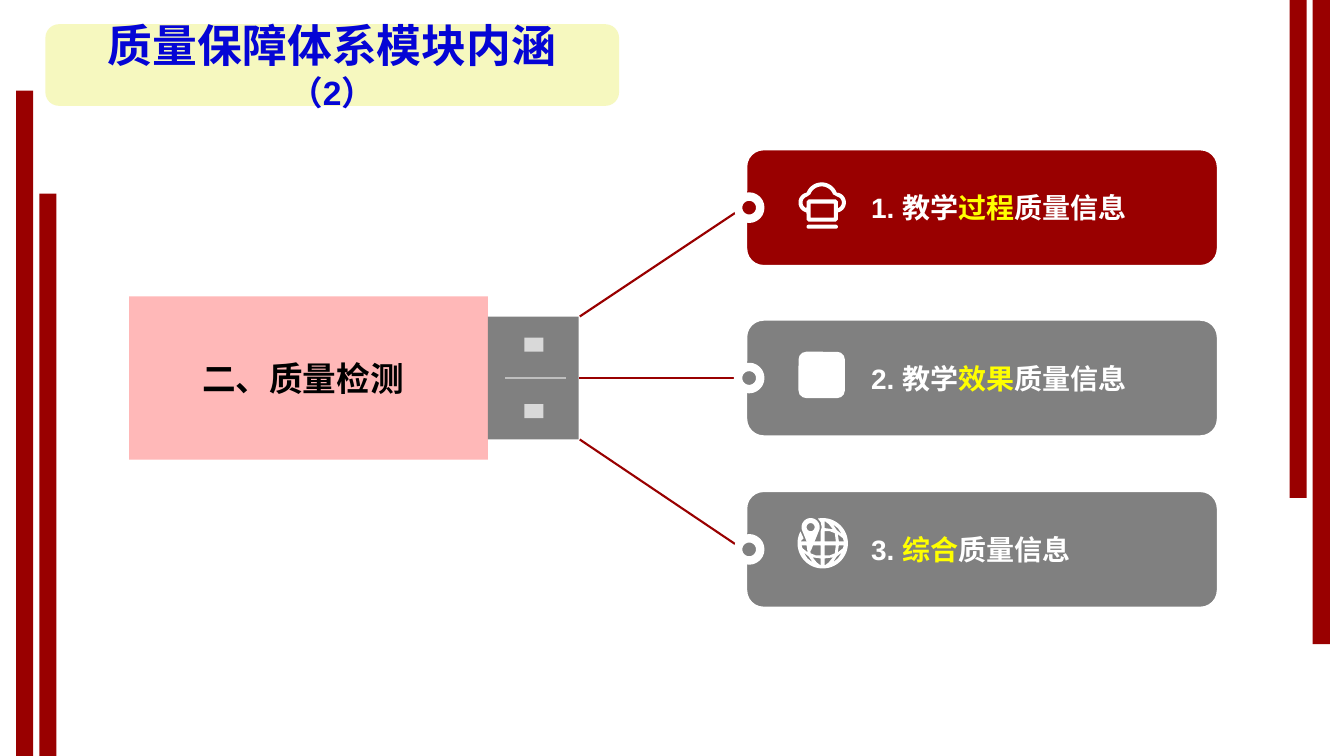
from math import cos, radians, sin

from lxml.etree import SubElement
from pptx import Presentation
from pptx.dml.color import RGBColor
from pptx.enum.shapes import MSO_CONNECTOR, MSO_SHAPE
from pptx.enum.text import MSO_ANCHOR, PP_ALIGN
from pptx.oxml.ns import qn
from pptx.util import Emu, Pt

EMU_PER_PX = 9144
LATIN_FONT = "Arial"
CHINESE_FONT = "Noto Sans CJK SC"
COLORS = {
    "red": "990000", "gray": "808080", "pink": "FFB8B8", "cream": "F6F8BF",
    "white": "FFFFFF", "black": "000000", "blue": "0505D5",
    "yellow": "FFFF00", "contact": "D9D9D9", "seam": "BFBFBF",
}
SIDE_BARS = [(16, 90, 660), (39, 192, 558), (1302, 0, 639), (1279, 0, 494)]
ITEMS = [
    ("red", [("1. 教学", "white"), ("过程", "yellow"), ("质量信息", "white")]),
    ("gray", [("2. 教学", "white"), ("效果", "yellow"), ("质量信息", "white")]),
    ("gray", [("3. ", "white"), ("综合", "yellow"), ("质量信息", "white")]),
]


def px(value):
    return Emu(round(value * EMU_PER_PX))


def color(name):
    return RGBColor.from_string(COLORS[name])


def paint(shape, fill, outline=None):
    shape.shadow.inherit = False
    shape.fill.solid()
    shape.fill.fore_color.rgb = color(fill)
    if outline:
        shape.line.color.rgb = color(outline)
        shape.line.width = Pt(6)
    else:
        shape.line.fill.background()


def add_block(slide, kind, left, top, width, height, fill, outline=None):
    shape = slide.shapes.add_shape(kind, px(left), px(top), px(width), px(height))
    paint(shape, fill, outline)
    return shape


def add_line(slide, start, end, line_color, width):
    line = slide.shapes.add_connector(
        MSO_CONNECTOR.STRAIGHT, px(start[0]), px(start[1]), px(end[0]), px(end[1]))
    line.line.color.rgb = color(line_color)
    line.line.width = Pt(width)
    SubElement(line._element.spPr, qn("a:effectLst"))
    return line


def style_paragraph(paragraph, size, font_name=LATIN_FONT, font_color=None):
    paragraph.font.size = Pt(size)
    paragraph.font.bold = True
    paragraph.font.name = font_name
    if font_color:
        paragraph.font.color.rgb = color(font_color)
    defaults = paragraph._p.pPr.find(qn("a:defRPr"))
    SubElement(defaults, qn("a:ea"), typeface=CHINESE_FONT)


def add_label(slide, left, top, width, height):
    """Add an empty, vertically centred text box and return its paragraph."""
    frame = slide.shapes.add_textbox(px(left), px(top), px(width), px(height)).text_frame
    frame.word_wrap = True
    frame.vertical_anchor = MSO_ANCHOR.MIDDLE
    frame.margin_left = frame.margin_right = px(8)
    frame.margin_top = frame.margin_bottom = 0
    return frame.paragraphs[0]


def add_outline(slide, contours, fill="white"):
    """Fill closed contours as one freeform; inner contours become holes."""
    contours = [[(px(x), px(y)) for x, y in contour] for contour in contours]
    builder = slide.shapes.build_freeform(*contours[0][0], scale=1.0)
    for number, contour in enumerate(contours):
        if number:
            builder.move_to(*contour[0])
        builder.add_line_segments(contour[1:], close=True)
    paint(builder.convert_to_shape(), fill)


def arc(x, y, radius, start, end, steps=24):
    """Points along an arc, in degrees clockwise from the right."""
    angles = [radians(start + (end - start) * step / steps) for step in range(steps + 1)]
    return [(x + radius * cos(angle), y + radius * sin(angle)) for angle in angles]


def add_cloud_icon(slide):
    outer = (arc(815, 197, 16, 200, 340) + arc(829, 201, 10, -78, 78)
             + [(831, 218), (829, 220), (802, 220), (800, 218)]
             + arc(802, 201, 10, 102, 258))
    inner = (arc(815, 197, 12, 200, 340) + arc(829, 201, 6, -70, 70)
             + [(831, 200), (829, 198), (802, 198), (800, 200)]
             + arc(802, 201, 6, 110, 250))
    screen = [(804, 202), (827, 202), (827, 216), (804, 216)]
    base = arc(802, 225, 2, 90, 270) + arc(829, 225, 2, -90, 90)
    add_outline(slide, [outer, inner, screen, base])


def add_globe_icon(slide):
    x, y = 816, 539
    notch = [(797, 534), (794, 537), (814, 537), (814, 527), (815, 523), (814, 518)]
    cells = [
        [(2, 2), (13, 2), (12, 10), (7, 12), (2, 12)],
        [(2, 15), (10, 14), (6, 19), (2, 22)],
        [(16, 2), (21, 2), (20, 5), (15, 9)],
        [(14, 13), (19, 9), (15, 15), (10, 19)],
    ]
    holes = [[(x + across * dx, y + down * dy) for dx, dy in cell]
             for across, down in ((1, -1), (1, 1), (-1, 1)) for cell in cells]
    add_outline(slide, [arc(x, y, 25, -101, 208, 60) + notch] + holes)
    add_outline(slide, [arc(804, 523, 9, 160, 380) + [(804, 547)],
                        arc(804, 523, 4, 0, 345)])


def add_camera_icon(slide):
    add_block(slide, MSO_SHAPE.ROUNDED_RECTANGLE, 792, 349, 46, 46, "white")


def add_title(slide):
    title = add_block(slide, MSO_SHAPE.ROUNDED_RECTANGLE, 45, 24, 569, 81, "cream")
    title.text_frame.vertical_anchor = MSO_ANCHOR.MIDDLE
    paragraph = title.text_frame.paragraphs[0]
    paragraph.alignment = PP_ALIGN.CENTER
    style_paragraph(paragraph, 32, font_color="blue")
    paragraph.add_run().text = "质量保障体系模块内涵"
    paragraph.add_line_break()
    number = paragraph.add_run()
    number.text = "（2）"
    number.font.size = Pt(24)
    for run in paragraph.runs:
        run.font.color.rgb = color("blue")


def add_usb_plug(slide):
    """Draw the category as a USB stick and return its metal plug."""
    add_block(slide, MSO_SHAPE.RECTANGLE, 128, 294, 356, 162, "pink")
    plug = add_block(slide, MSO_SHAPE.RECTANGLE, 484, 314, 90, 122, "gray")
    for top in (335, 401):
        add_block(slide, MSO_SHAPE.RECTANGLE, 520, top, 19, 14, "contact")
    add_line(slide, (501, 375), (561, 375), "seam", 1)
    paragraph = add_label(slide, 169, 324, 263, 103)
    paragraph.alignment = PP_ALIGN.CENTER
    style_paragraph(paragraph, 24, CHINESE_FONT, "black")
    paragraph.add_run().text = "二、质量检测"
    return plug


def add_item(slide, plug, top, plug_y, fill, parts):
    box = add_block(slide, MSO_SHAPE.ROUNDED_RECTANGLE, 737, top, 474, 122, fill, "white")
    line = add_line(slide, (737, top + 61), (575, plug_y), "red", 1.5)
    line.begin_connect(box, 1)
    if plug_y == top + 61:
        line.end_connect(plug, 3)
    add_block(slide, MSO_SHAPE.OVAL, 732, top + 50, 22, 22, fill, "white")
    paragraph = add_label(slide, 856, top + 24, 342, 74)
    style_paragraph(paragraph, 20)
    for text, text_color in parts:
        run = paragraph.add_run()
        run.text = text
        run.font.color.rgb = color(text_color)


def main():
    presentation = Presentation()
    presentation.slide_width, presentation.slide_height = px(1333), px(750)
    slide = presentation.slides.add_slide(presentation.slide_layouts[6])
    for left, top, height in SIDE_BARS:
        add_block(slide, MSO_SHAPE.RECTANGLE, left, top, 17, height, "red")
    plug = add_usb_plug(slide)
    for index, (fill, parts) in enumerate(ITEMS):
        add_item(slide, plug, 145 + 339 * index // 2, 314 + 61 * index, fill, parts)
    add_cloud_icon(slide)
    add_camera_icon(slide)
    add_globe_icon(slide)
    add_title(slide)
    presentation.save("out.pptx")


if __name__ == "__main__":
    main()
